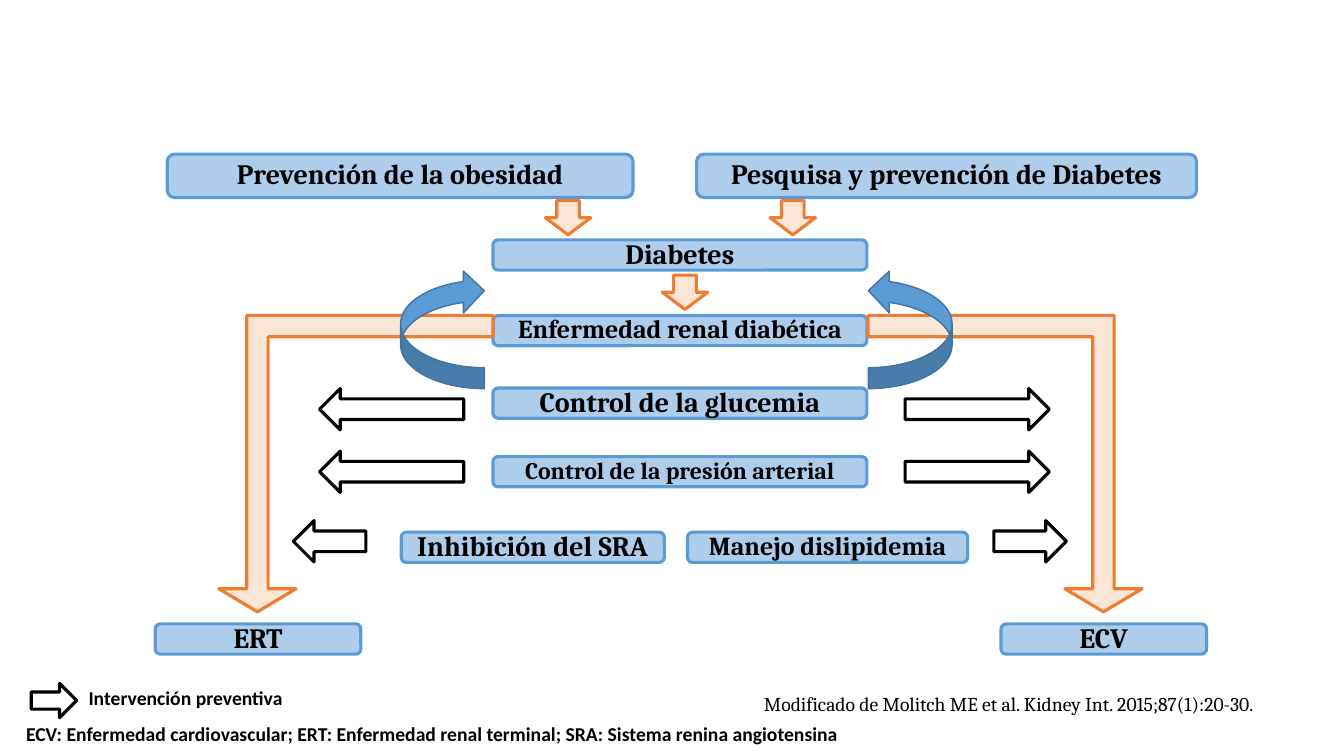
from lxml import etree
from pptx import Presentation
from pptx.dml.color import RGBColor
from pptx.enum.shapes import MSO_SHAPE
from pptx.enum.text import MSO_ANCHOR, MSO_AUTO_SIZE, PP_ALIGN
from pptx.oxml.ns import qn
from pptx.util import Inches, Pt

ROUNDED = MSO_SHAPE.ROUNDED_RECTANGLE
DOWN_ARROW = MSO_SHAPE.DOWN_ARROW
RIGHT_ARROW = MSO_SHAPE.RIGHT_ARROW
BENT_ARROW = MSO_SHAPE.BENT_UP_ARROW
CURVED_ARROW = MSO_SHAPE.CURVED_UP_ARROW
MIDDLE = MSO_ANCHOR.MIDDLE
LEFT, CENTER, RIGHT = PP_ALIGN.LEFT, PP_ALIGN.CENTER, PP_ALIGN.RIGHT
NO_RESIZE, GROW = MSO_AUTO_SIZE.NONE, MSO_AUTO_SIZE.SHAPE_TO_FIT_TEXT

BLUE = RGBColor(0x5B, 0x9B, 0xD5)
DARK_BLUE = RGBColor(0x43, 0x73, 0x9E)
ORANGE = RGBColor(0xED, 0x7D, 0x31)
PEACH = RGBColor(0xFB, 0xE5, 0xD6)
WHITE = RGBColor(0xFF, 0xFF, 0xFF)
BLACK = RGBColor(0, 0, 0)


class Diagram:
    """Draws on a slide divided into 100 columns and 100 rows."""
    serif = "Cambria"
    sans = "Calibri"
    line_width = 2.25
    box_opacity = 49
    small_arrow = (3.38, 4.53)

    def __init__(self, presentation):
        self.column = presentation.slide_width / 100
        self.row = presentation.slide_height / 100
        self.slide = presentation.slides.add_slide(presentation.slide_layouts[6])

    def place(self, left, top, width, height):
        """Turn columns and rows into slide lengths."""
        return (round(left * self.column), round(top * self.row),
                round(width * self.column), round(height * self.row))

    def shape(self, kind, area, fill, line, line_width=line_width, flips=()):
        shape = self.slide.shapes.add_shape(kind, *self.place(*area))
        shape.shadow.inherit = False
        shape.fill.solid()
        shape.fill.fore_color.rgb = fill
        shape.line.color.rgb = line
        shape.line.width = Pt(line_width)
        for flip in flips:
            shape.element.spPr.get_or_add_xfrm().set(flip, "1")
        return shape

    def set_text(self, frame, text, size, font, bold, align):
        paragraph = frame.paragraphs[0]
        paragraph.text = text
        paragraph.alignment = align
        paragraph.font.size = Pt(size)
        paragraph.font.name = font
        paragraph.font.bold = bold
        paragraph.font.color.rgb = BLACK
        return paragraph

    def box(self, text, area, size=20):
        shape = self.shape(ROUNDED, area, BLUE, BLUE)
        color = shape.element.spPr.find(qn("a:solidFill"))[0]
        etree.SubElement(color, qn("a:alpha"), val=str(self.box_opacity * 1000))
        frame = shape.text_frame
        frame.word_wrap = True
        frame.vertical_anchor = MIDDLE
        frame.margin_left = frame.margin_right = 0
        frame.margin_top = frame.margin_bottom = 0
        self.set_text(frame, text, size, self.serif, True, CENTER).line_spacing = 0.9

    def down_arrow(self, left, top):
        self.shape(DOWN_ARROW, (left, top, *self.small_arrow), PEACH, ORANGE)

    def prevention_arrow(self, area, flips=()):
        self.shape(RIGHT_ARROW, area, WHITE, BLACK, flips=flips)

    def outcome_arrow(self, left, flips):
        arrow = self.shape(BENT_ARROW, (left, 41.73, 20.4, 39.2), PEACH, ORANGE, flips=flips)
        for index, value in enumerate((0.078, 0.141, 0.084)):
            arrow.adjustments[index] = value

    def return_arrow(self, left, rotation, flips=()):
        arrow = self.shape(CURVED_ARROW, (left, 38, 8.85, 11.07), BLUE, DARK_BLUE, 1, flips)
        arrow.rotation = rotation

    def note(self, text, area):
        frame = self.slide.shapes.add_textbox(*self.place(*area)).text_frame
        frame.word_wrap = False
        frame.auto_size = GROW
        self.set_text(frame, text, 14, self.sans, True, LEFT)

    def citation(self, text, area):
        frame = self.slide.shapes.add_textbox(*self.place(*area)).text_frame
        frame.word_wrap = True
        frame.auto_size = NO_RESIZE
        frame.vertical_anchor = MIDDLE
        self.set_text(frame, text, 14, self.serif, False, RIGHT).line_spacing = 0.9


def main():
    presentation = Presentation()
    presentation.slide_width = Inches(13.33)
    presentation.slide_height = Inches(7.5)
    diagram = Diagram(presentation)

    diagram.box("Prevención de la obesidad", (12.45, 20.4, 34.65, 5.73))
    diagram.box("Pesquisa y prevención de Diabetes", (51.83, 20.4, 37.2, 5.73))
    for text, top, size in (
        ("Diabetes", 31.73, 20),
        ("Enfermedad renal diabética", 41.73, 18.5),
        ("Control de la glucemia", 51.33, 20),
        ("Control de la presión arterial", 60.4, 17),
    ):
        diagram.box(text, (36.68, top, 27.82, 4), size)
    diagram.box("Inhibición del SRA", (29.85, 70.4, 19.58, 4))
    diagram.box("Manejo dislipidemia", (51.15, 70.4, 20.85, 4), 18.5)
    for text, left in (("ERT", 11.55), ("ECV", 74.48)):
        diagram.box(text, (left, 82.53, 15.3, 4))

    diagram.citation("Modificado de Molitch ME et al. Kidney Int. 2015;87(1):20-30.",
                     (46.13, 89.73, 47.93, 7.07))

    for left, top in ((40.58, 26.53), (57.3, 26.53), (49.28, 36.4)):
        diagram.down_arrow(left, top)

    for right_side, left_side, top, width in (
        (67.35, 23.78, 51.4, 10.73),
        (67.35, 23.78, 59.67, 10.73),
        (73.95, 21.83, 68.87, 5.4),
    ):
        diagram.prevention_arrow((right_side, top, width, 5.47))
        diagram.prevention_arrow((left_side, top, width, 5.47), ("flipH",))

    diagram.outcome_arrow(64.58, ("flipV",))
    diagram.outcome_arrow(16.28, ("flipH", "flipV"))
    diagram.return_arrow(63.3, 270)
    diagram.return_arrow(28.5, 90, ("flipH",))

    diagram.note("ECV: Enfermedad cardiovascular; ERT: Enfermedad renal terminal; "
                 "SRA: Sistema renina angiotensina", (1.2, 94.8, 62.33, 4.53))
    diagram.prevention_arrow((2.33, 90.4, *diagram.small_arrow))
    diagram.note("Intervención preventiva", (5.85, 90.13, 16.05, 4.53))

    presentation.save("out.pptx")


if __name__ == "__main__":
    main()
